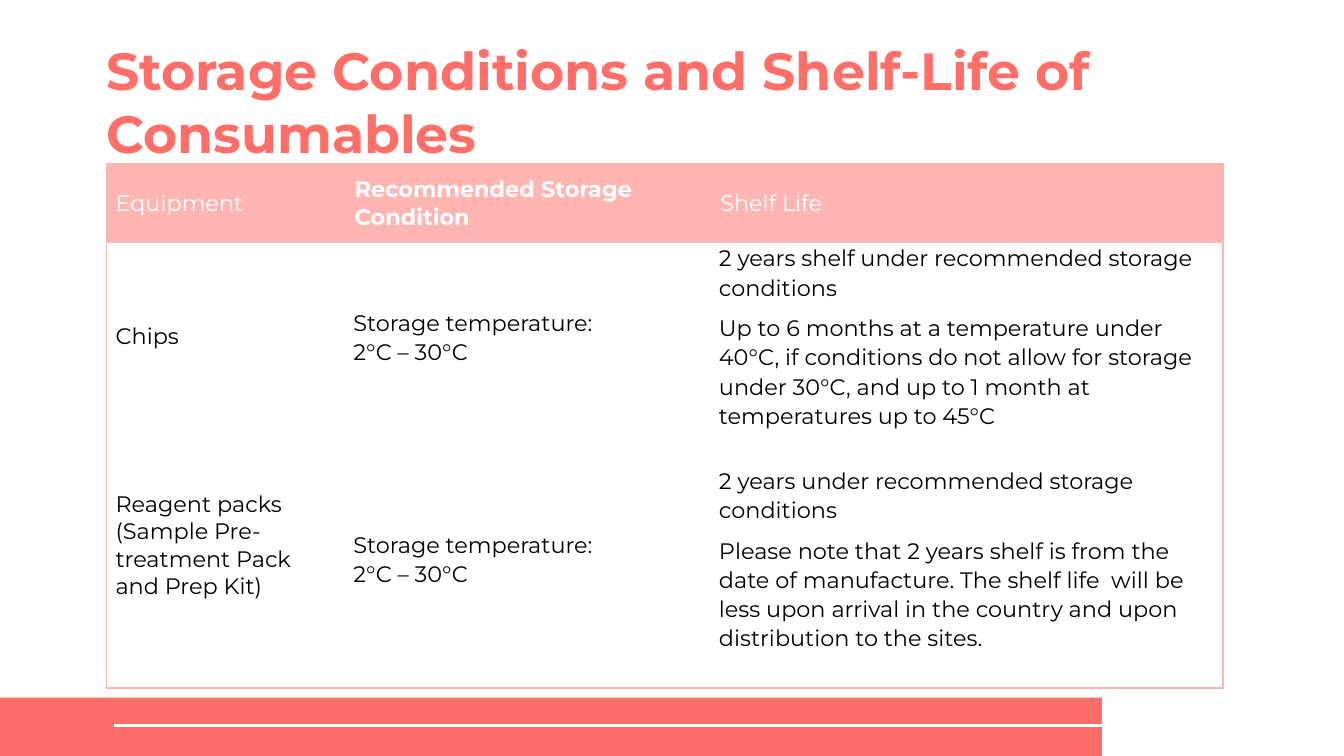
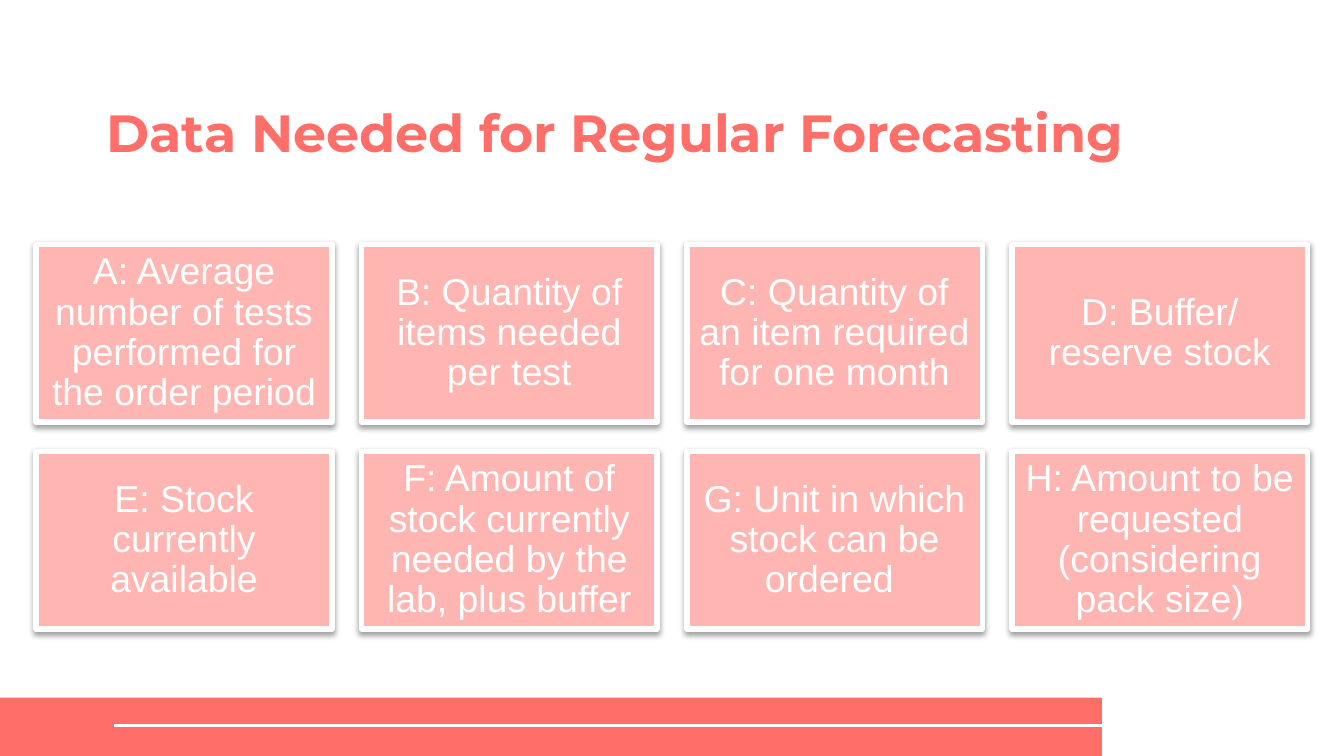
from copy import deepcopy

from lxml import etree
from pptx import Presentation
from pptx import util as u
from pptx.dml.color import RGBColor
from pptx.enum import shapes, text
from pptx.oxml import ns

# Shared style
COLORS = {"coral": "FF6E68", "pink": "FFB6B3", "white": "FFFFFF", "black": "000000"}
HEADING_FONT, BOX_FONT = "Montserrat", "Arial"
SLIDE_WIDTH = 10
SLIDE_HEIGHT = SLIDE_WIDTH * 9 / 16
BAND_TOP = 5.19

# Content: storage table
STORAGE_TITLE = "Storage Conditions and Shelf-Life of Consumables"
STORAGE_HEADERS = ["Equipment", "Recommended Storage Condition", "Shelf Life"]
STORAGE_ROWS = [
    [
        ["Chips"],
        ["Storage temperature: \n2°C – 30°C"],
        ["2 years shelf under recommended storage conditions",
         "Up to 6 months at a temperature under 40°C, if conditions do not allow for "
         "storage under 30°C, and up to 1 month at temperatures up to 45°C"],
    ],
    [
        ["Reagent packs (Sample Pre-treatment Pack and Prep Kit)"],
        ["Storage temperature:\n2°C – 30°C"],
        ["2 years under recommended storage conditions",
         "Please note that 2 years shelf is from the date of manufacture. The shelf life  "
         "will be less upon arrival in the country and upon distribution to the sites."],
    ],
]
COLUMN_WIDTHS = [1.78, 2.72, 3.81]
ROW_HEIGHTS = [0.59, 1.39, 1.92]

# Content: forecasting boxes
FORECAST_TITLE = "Data Needed for Regular Forecasting"
FORECAST_ITEMS = [
    "A: Average number of tests performed for the order period",
    "B: Quantity of items needed per test",
    "C: Quantity of an item required for one month",
    "D: Buffer/ reserve stock",
    "E: Stock currently available",
    "F: Amount of stock currently needed by the lab, plus buffer",
    "G: Unit in which stock can be ordered ",
    "H: Amount to be requested (considering pack size)",
]
BOXES_PER_ROW = 4
BOX_LEFT, BOX_TOP, BOX_WIDTH, BOX_HEIGHT, BOX_GAP = 0.27, 1.82, 2.2, 1.32, 0.22


def rgb(name):
    return RGBColor.from_string(COLORS[name])


def inches(*values):
    return [u.Inches(value) for value in values]


def write(frame, paragraphs, size=12, font=HEADING_FONT, color="black", bold=False,
          align=text.PP_ALIGN.LEFT, spacing=1.0, before=0):
    """Fill a text frame; `before` is the gap above each later paragraph."""
    for index, content in enumerate(paragraphs):
        paragraph = frame.paragraphs[0] if index == 0 else frame.add_paragraph()
        paragraph.text = content
        paragraph.alignment = align
        paragraph.line_spacing = spacing
        paragraph.space_before = u.Pt(before if index else 0)
        for run in paragraph.runs:
            run.font.size, run.font.name, run.font.bold = u.Pt(size), font, bold
            run.font.color.rgb = rgb(color)
        # Line breaks take the format of the text around them
        for line_break in paragraph._p.findall(ns.qn("a:br")):
            line_break.append(deepcopy(paragraph.runs[0]._r.rPr))


def set_margins(target, horizontal, vertical):
    target.margin_left = target.margin_right = u.Inches(horizontal)
    target.margin_top = target.margin_bottom = u.Inches(vertical)


def add_rectangle(slide, box, fill):
    rectangle = slide.shapes.add_shape(shapes.MSO_SHAPE.RECTANGLE, *inches(*box))
    rectangle.shadow.inherit = False
    rectangle.fill.solid()
    rectangle.fill.fore_color.rgb = rgb(fill)
    rectangle.line.fill.background()
    return rectangle


def add_base_slide(deck, title, title_width, title_spacing):
    """Blank slide with the footer band, its rule and the title."""
    slide = deck.slides.add_slide(deck.slide_layouts[6])
    add_rectangle(slide, (0, BAND_TOP, 8.2, SLIDE_HEIGHT - BAND_TOP), "coral")
    rule = slide.shapes.add_connector(
        shapes.MSO_CONNECTOR.STRAIGHT, *inches(8.26, 5.4, 0.85, 5.4))
    rule.line.color.rgb = rgb("white")
    rule.line.width = u.Pt(1.5)
    etree.SubElement(rule._element.spPr, ns.qn("a:effectLst"))

    heading = slide.shapes.add_textbox(*inches(0.79, 0.72, title_width, 0.5)).text_frame
    heading.word_wrap = True
    heading.vertical_anchor = text.MSO_ANCHOR.BOTTOM
    set_margins(heading, 0, 0)
    write(heading, [title], size=28, color="coral", bold=True, spacing=title_spacing)
    return slide


def set_borders(cell, edges):
    """Draw the listed edges in pink and hide the others."""
    properties = cell._tc.get_or_add_tcPr()
    for edge in "LRTB":
        line = etree.SubElement(properties, ns.qn(f"a:ln{edge}"), w=str(u.Pt(0.75)))
        if edge in edges:
            fill = etree.SubElement(line, ns.qn("a:solidFill"))
            etree.SubElement(fill, ns.qn("a:srgbClr"), val=COLORS["pink"])
        else:
            etree.SubElement(line, ns.qn("a:noFill"))


def add_storage_table(slide):
    last_row, last_column = len(ROW_HEIGHTS) - 1, len(COLUMN_WIDTHS) - 1
    table = slide.shapes.add_table(
        last_row + 1, last_column + 1,
        *inches(0.79, 1.22, sum(COLUMN_WIDTHS), sum(ROW_HEIGHTS))).table
    for column, width in zip(table.columns, COLUMN_WIDTHS):
        column.width = u.Inches(width)
    for row, height in zip(table.rows, ROW_HEIGHTS):
        row.height = u.Inches(height)
    table.first_row = table.horz_banding = False

    rows = [[[header] for header in STORAGE_HEADERS]] + STORAGE_ROWS
    for r, row in enumerate(rows):
        for c, paragraphs in enumerate(row):
            cell = table.cell(r, c)
            outer = {"L": c == 0, "R": c == last_column, "T": r == 0, "B": r == last_row}
            set_borders(cell, [edge for edge, shown in outer.items() if shown])
            cell.vertical_anchor = text.MSO_ANCHOR.MIDDLE
            if r == 0:
                cell.fill.solid()
                cell.fill.fore_color.rgb = rgb("pink")
            else:
                cell.fill.background()
            if r == 0 or c == 0:
                set_margins(cell, 0.07, 0.04)
                write(cell.text_frame, paragraphs, bold=r == 0 and c == 1,
                      color="black" if r else "white")
            else:
                set_margins(cell, 0.06, 0)
                write(cell.text_frame, paragraphs, spacing=1.07, before=6)
    # The reagent label sits slightly above the middle of its row
    table.cell(last_row, 0).margin_bottom = u.Inches(0.24)


def add_soft_shadow(shape):
    effects = shape._element.spPr.find(ns.qn("a:effectLst"))
    shadow = etree.SubElement(
        effects, ns.qn("a:outerShdw"), blurRad=str(u.Pt(3.1)), dist=str(u.Pt(1.6)),
        dir="5400000", rotWithShape="0")
    color = etree.SubElement(shadow, ns.qn("a:srgbClr"), val=COLORS["black"])
    etree.SubElement(color, ns.qn("a:alpha"), val="36000")


def add_forecast_boxes(slide):
    for index, item in enumerate(FORECAST_ITEMS):
        row, column = divmod(index, BOXES_PER_ROW)
        left = BOX_LEFT + column * (BOX_WIDTH + BOX_GAP)
        top = BOX_TOP + row * (BOX_HEIGHT + BOX_GAP)
        box = add_rectangle(slide, (left, top, BOX_WIDTH, BOX_HEIGHT), "pink")
        box.line.color.rgb = rgb("white")
        box.line.width = u.Pt(3)
        add_soft_shadow(box)
        frame = box.text_frame
        frame.word_wrap = True
        frame.vertical_anchor = text.MSO_ANCHOR.MIDDLE
        set_margins(frame, 0.08, 0.08)
        write(frame, [item], size=20, font=BOX_FONT, color="white",
              align=text.PP_ALIGN.CENTER, spacing=0.9)


def main():
    deck = Presentation()
    deck.slide_width, deck.slide_height = inches(SLIDE_WIDTH, SLIDE_HEIGHT)
    add_storage_table(add_base_slide(deck, STORAGE_TITLE, 8.75, 1.0))
    add_forecast_boxes(add_base_slide(deck, FORECAST_TITLE, 8.5, 0.9))
    deck.save("out.pptx")


if __name__ == "__main__":
    main()
